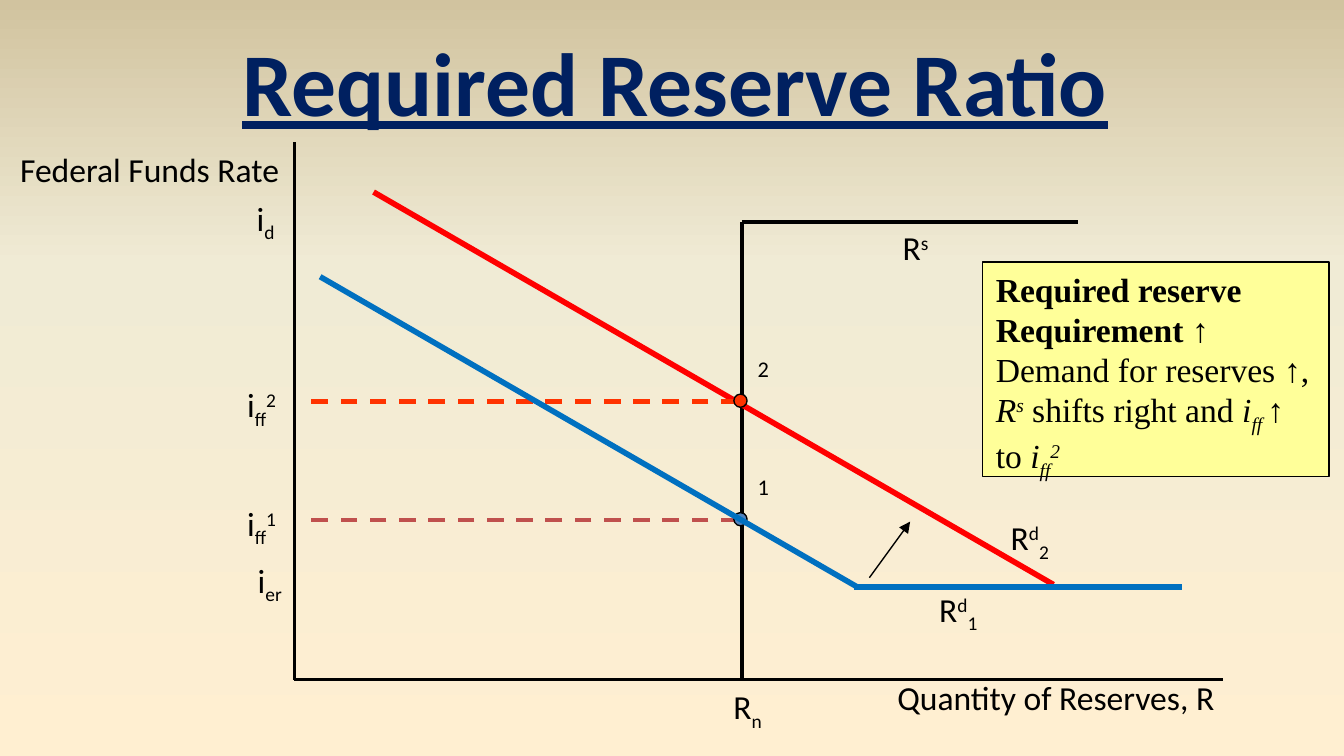
from dataclasses import dataclass

from copy import deepcopy
from lxml.etree import SubElement
from pptx import Presentation
from pptx.dml.color import RGBColor
from pptx.enum.dml import MSO_LINE
from pptx.enum.shapes import MSO_CONNECTOR, MSO_SHAPE
from pptx.enum.text import MSO_ANCHOR, PP_ALIGN
from pptx.oxml.ns import qn
from pptx.util import Cm, Pt


@dataclass(frozen=True)
class Theme:
    font: str = "Calibri"
    note_font: str = "Times New Roman"
    symbol_font: str = "Arial"
    title_size: int = 48
    text_size: int = 18
    small_size: int = 12
    ink: str = "000000"
    title: str = "002060"
    note: str = "FFFF99"
    demand_1: str = "0070C0"
    demand_2: str = "FF0000"
    dash_1: str = "C0504D"
    dash_2: str = "FF3300"
    dot_1: str = "4F81BD"
    dot_2: str = "FF3300"
    background: tuple = ((0, "FFEFD1"), (0.65, "F0EBD5"), (1, "D1C39F"))


BASELINES = {"^": "30000", "_": "-25000"}


class Diagram:
    """Draws on one slide; all lengths are centimetres."""

    def __init__(self, slide, theme):
        self.s = slide
        self.t = theme

    def background(self):
        fill = self.s.background.fill
        fill.gradient()
        fill.gradient_angle = 90
        first = fill.gradient_stops[0]._gs
        first.addnext(deepcopy(first))
        for stop, (position, color) in zip(fill.gradient_stops, self.t.background):
            stop.position = position
            stop.color.rgb = RGBColor.from_string(color)

    def line(self, x1, y1, x2, y2, color, width, dashed=False, arrow=False):
        c = self.s.shapes.add_connector(
            MSO_CONNECTOR.STRAIGHT, Cm(x1), Cm(y1), Cm(x2), Cm(y2))
        c.line.color.rgb = RGBColor.from_string(color)
        c.line.width = Pt(width)
        if dashed:
            c.line.dash_style = MSO_LINE.DASH
        if arrow:
            SubElement(c.line._get_or_add_ln(), qn("a:tailEnd"), type="triangle")
        SubElement(c._element.spPr, qn("a:effectLst"))

    def shape(self, kind, x, y, w, h, fill, width):
        sp = self.s.shapes.add_shape(kind, Cm(x), Cm(y), Cm(w), Cm(h))
        sp.shadow.inherit = False
        sp.fill.solid()
        sp.fill.fore_color.rgb = RGBColor.from_string(fill)
        sp.line.color.rgb = RGBColor.from_string(self.t.ink)
        sp.line.width = Pt(width)
        return sp

    def runs(self, p, parts):
        """Add runs; a part is text or (text, marks): ^ raised, _ lowered, i italic."""
        for part in parts:
            text, marks = (part, "") if isinstance(part, str) else part
            r = p.add_run()
            r.text = text
            if "i" in marks:
                r.font.italic = True
            if text == "↑":
                r.font.name = self.t.symbol_font
            for mark, baseline in BASELINES.items():
                if mark in marks:
                    r._r.get_or_add_rPr().set("baseline", baseline)

    def style(self, p, size, color, font, bold=False):
        p.font.size = Pt(size)
        p.font.name = font
        p.font.bold = bold
        p.font.color.rgb = RGBColor.from_string(color)

    def label(self, x, y, w, *parts, h=1.02, size=None, color=None,
              wrap=False, align=PP_ALIGN.LEFT, bold=False):
        tf = self.s.shapes.add_textbox(Cm(x), Cm(y), Cm(w), Cm(h)).text_frame
        tf.word_wrap = wrap
        p = tf.paragraphs[0]
        p.alignment = align
        self.style(p, size or self.t.text_size, color or self.t.ink,
                   self.t.font, bold)
        self.runs(p, parts)
        return p

    def note(self, x, y, w, h, heading, body):
        tf = self.shape(MSO_SHAPE.RECTANGLE, x, y, w, h, self.t.note, 1).text_frame
        tf.word_wrap = True
        tf.vertical_anchor = MSO_ANCHOR.TOP
        for p, parts, bold in ((tf.paragraphs[0], heading, True),
                               (tf.add_paragraph(), body, False)):
            p.alignment = PP_ALIGN.LEFT
            self.style(p, self.t.text_size, self.t.ink, self.t.note_font, bold)
            self.runs(p, parts)


def main():
    prs = Presentation()
    prs.slide_width, prs.slide_height = Cm(25.4), Cm(14.29)
    t = Theme()
    d = Diagram(prs.slides.add_slide(prs.slide_layouts[6]), t)
    d.background()

    # Explanation
    d.note(18.57, 4.95, 6.55, 4.06,
           ["Required reserve Requirement ", "↑"],
           ["Demand for reserves ", "↑", ", ", ("R", "i"), ("s", "i^"),
            " shifts right and ", ("i", "i"), ("ff ", "i_"), "↑",
            " to ", ("i", "i"), ("ff", "i_"), ("2", "i^")])

    # Axes
    left, bottom = 5.56, 12.85
    d.line(left, 2.69, left, bottom, t.ink, 1.5)
    d.line(left, bottom, 23.11, bottom, t.ink, 1.5)

    # Supply curve
    supply_x, discount_y = 14.02, 4.19
    d.line(supply_x, bottom, supply_x, discount_y, t.ink, 2.25)
    d.line(supply_x, discount_y, 20.37, discount_y, t.ink, 2.25)
    d.label(16.81, 4.17, 1.19, "R", ("s", "^"))
    d.label(4.6, 3.61, 0.89, "i", ("d", "_"))
    d.label(13.61, bottom, 1.19, "R", ("n", "_"))

    # Second demand curve
    d.line(7.06, 3.63, 19.91, 11.05, t.demand_2, 3)
    d.label(18.85, 9.65, 1.45, "R", ("d", "^"), ("2", "_"))

    # Equilibria: dashed rate, rate label, dot and number
    for number, y, start, dash, dot in (("2", 7.59, 5.74, t.dash_2, t.dot_2),
                                        ("1", 9.83, 5.69, t.dash_1, t.dot_1)):
        d.line(13.94, y, start, y, dash, 2.25, dashed=True)
        d.label(4.42, y - 0.45, 1.12, "i", ("ff", "_"), (number, "^"))
        d.shape(MSO_SHAPE.OVAL, 13.87, y - 0.14, 0.25, 0.25, dot, 0.75)
        d.label(14.07, y - 1.01, 0.74, number, h=0.76, size=t.small_size)

    # First demand curve and its shift
    floor_y = 11.1
    d.line(16.43, 10.92, 17.2, 9.86, t.ink, 0.75, arrow=True)
    d.line(6.05, 5.23, 16.21, floor_y, t.demand_1, 3)
    d.line(16.15, floor_y, 22.33, floor_y, t.demand_1, 3)
    d.label(17.5, 11, 1.45, "R", ("d", "^"), ("1", "_"))
    d.label(4.62, 10.46, 1.27, "i", ("er", "_"), wrap=True)

    # Axis names and title
    d.label(0, 2.69, 5.66, "Federal Funds Rate", wrap=True, align=PP_ALIGN.CENTER)
    d.label(16.71, 12.67, 6.55, "Quantity of Reserves, R", wrap=True)
    title = d.label(4.24, 0.38, 17.04, "Required Reserve Ratio", h=2.31,
                    size=t.title_size, color=t.title, align=PP_ALIGN.CENTER, bold=True)
    title.font.underline = True

    prs.save("out.pptx")


if __name__ == "__main__":
    main()
